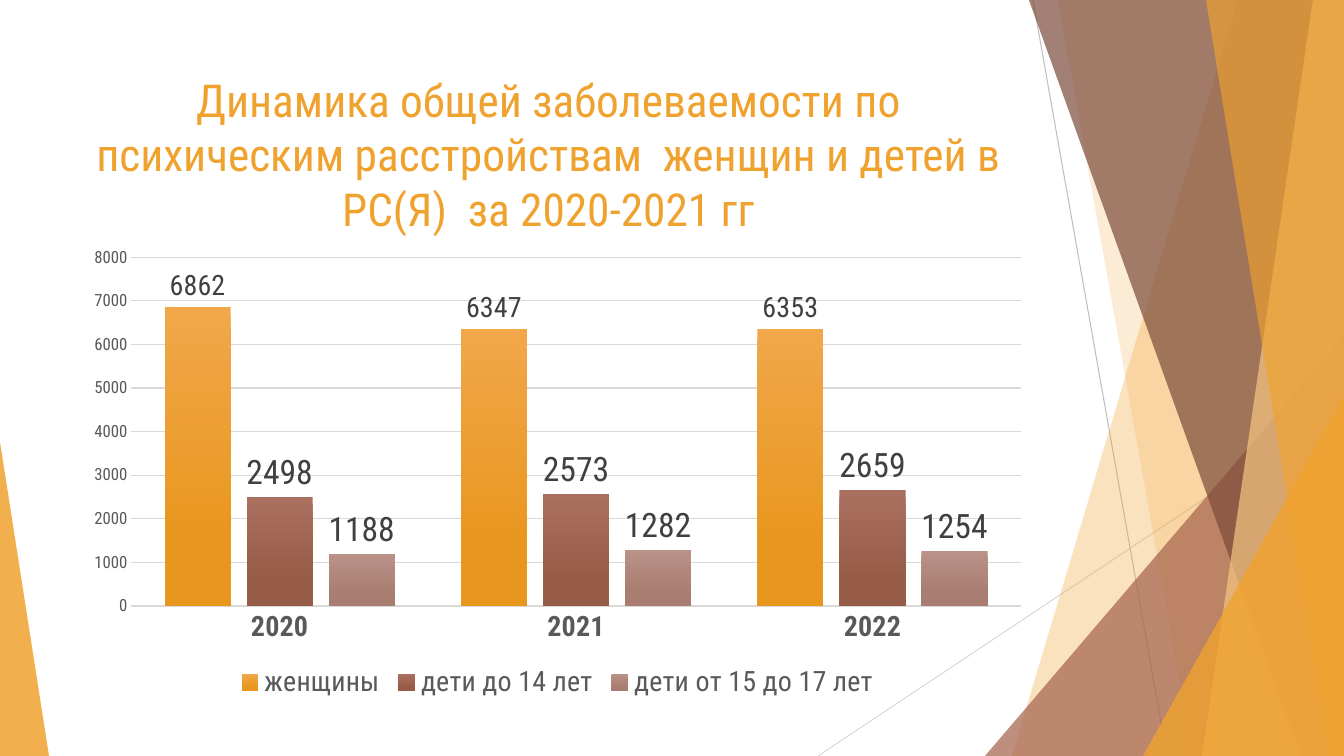
"""Builds the slide on psychiatric morbidity with a clustered column chart."""
from lxml import etree
from pptx import Presentation
from pptx.chart.data import CategoryChartData
from pptx.dml.color import RGBColor
from pptx.enum.chart import XL_CHART_TYPE as CT, XL_LABEL_POSITION as LP
from pptx.enum.chart import XL_LEGEND_POSITION as LEG, XL_TICK_MARK as TM
from pptx.enum.shapes import MSO_CONNECTOR as CON, MSO_SHAPE as MS
from pptx.enum.text import MSO_ANCHOR as ANCHOR, PP_ALIGN as AL
from pptx.oxml.ns import qn
from pptx.util import Pt

W, H = 1344, 756
SCALE = 914400 / 100.8
FONT = "Roboto Condensed"
GREY, DARK, GRID = "595959", "404040", "D9D9D9"

TITLE = ("Динамика общей заболеваемости по психическим расстройствам  "
         "женщин и детей в РС(Я)  за 2020-2021 гг")
TITLE_BOX = (75, 67, 947, 146)
CHART_BOX = (75, 238, 965, 467)
YEARS = ["2020", "2021", "2022"]
SERIES = [
    ("женщины", (6862, 6347, 6353), ("F1A74A", "E8971E"), 20),
    ("дети до 14 лет", (2498, 2573, 2659), ("AA705F", "975C47"), 24),
    ("дети от 15 до 17 лет", (1188, 1282, 1254), ("B99288", "A97D71"), 24),
]
RULES = [((1033, 0, 1167, H), "BFBFBF"), ((W, 406, 818, H), GRID)]
DECOR = [
    ("band", (1238, 1012), "F0A22E", 30),
    ("band", (1058, 1193), "F0A22E", 20),
    ("triangle", (985, 336, 359, 420, 1), "A5644E", 72),
    ("band", (1029, 1301), "7C4B3B", 70),
    ("band", (1313, 1202), "F6C782", 70),
    ("band", (1206, 1329), "F0A22E", 65),
    ("triangle", (1143, 396, 201, 360, 1), "F0A22E", 80),
    ("triangle", (0, 442, 49, 314, 0), "F0A22E", 85),
]


def px(*lengths):
    return [round(n * SCALE) for n in lengths]


def rgb(code):
    return RGBColor.from_string(code)


def style(font, size, color, bold=False):
    font.name, font.size, font.bold = FONT, Pt(size), bold
    font.color.rgb = rgb(color)


def stroke(line, color, width):
    line.color.rgb = rgb(color)
    line.width = Pt(width)


def add_rule(s, ends, color):
    c = s.shapes.add_connector(CON.STRAIGHT, *px(*ends))
    stroke(c.line, color, 0.75)
    etree.SubElement(c._element.spPr, qn("a:effectLst"))


def add_decor(s, kind, geometry, color, alpha):
    if kind == "band":
        top, bottom = geometry
        fb = s.shapes.build_freeform(top, 0, scale=SCALE)
        fb.add_line_segments([(W, 0), (W, H), (bottom, H)], close=True)
        sp = fb.convert_to_shape()
    else:
        *box, apex = geometry
        sp = s.shapes.add_shape(MS.ISOSCELES_TRIANGLE, *px(*box))
        sp.adjustments[0] = apex
    sp.shadow.inherit = False
    sp.line.fill.background()
    sp.fill.solid()
    sp.fill.fore_color.rgb = rgb(color)
    clr = sp._element.spPr.find(qn("a:solidFill"))[0]
    etree.SubElement(clr, qn("a:alpha"), val=str(alpha * 1000))


def add_title(s):
    tf = s.shapes.add_textbox(*px(*TITLE_BOX)).text_frame
    tf.word_wrap = True
    tf.vertical_anchor = ANCHOR.TOP
    p = tf.paragraphs[0]
    p.alignment = AL.CENTER
    r = p.add_run()
    r.text = TITLE
    style(r.font, 32.4, "F0A22E")


def add_columns(s):
    data = CategoryChartData()
    data.categories = YEARS
    for name, values, *_ in SERIES:
        data.add_series(name, values)
    chart = s.shapes.add_chart(CT.COLUMN_CLUSTERED, *px(*CHART_BOX), data).chart
    style(chart.font, 10, "000000")
    chart.has_title = False
    chart.has_legend = True
    chart.legend.position = LEG.BOTTOM
    chart.legend.include_in_layout = False
    style(chart.legend.font, 20, GREY)

    cat, val = chart.category_axis, chart.value_axis
    for axis in (cat, val):
        axis.major_tick_mark = axis.minor_tick_mark = TM.NONE
    style(cat.tick_labels.font, 20, GREY, True)
    style(val.tick_labels.font, 12, GREY)
    stroke(cat.format.line, GRID, 1)
    val.format.line.fill.background()
    stroke(val.major_gridlines.format.line, GRID, 0.75)
    val.minimum_scale, val.maximum_scale, val.major_unit = 0, 8000, 1000

    plot = chart.plots[0]
    plot.gap_width, plot.overlap, plot.vary_by_categories = 100, -24, False
    for ser, (_, _, colors, size) in zip(plot.series, SERIES):
        fill = ser.format.fill
        fill.gradient()
        fill.gradient_angle = 270
        for stop, color, place in zip(fill.gradient_stops, colors, (0, 0.78)):
            stop.color.rgb = rgb(color)
            stop.position = place
        labels = ser.data_labels
        labels.show_value = True
        labels.position = LP.OUTSIDE_END
        style(labels.font, size, DARK)


def main():
    prs = Presentation()
    prs.slide_width, prs.slide_height = px(W, H)
    s = prs.slides.add_slide(prs.slide_layouts[6])
    for rule in RULES:
        add_rule(s, *rule)
    for piece in DECOR:
        add_decor(s, *piece)
    add_title(s)
    add_columns(s)
    prs.save("out.pptx")


if __name__ == "__main__":
    main()
